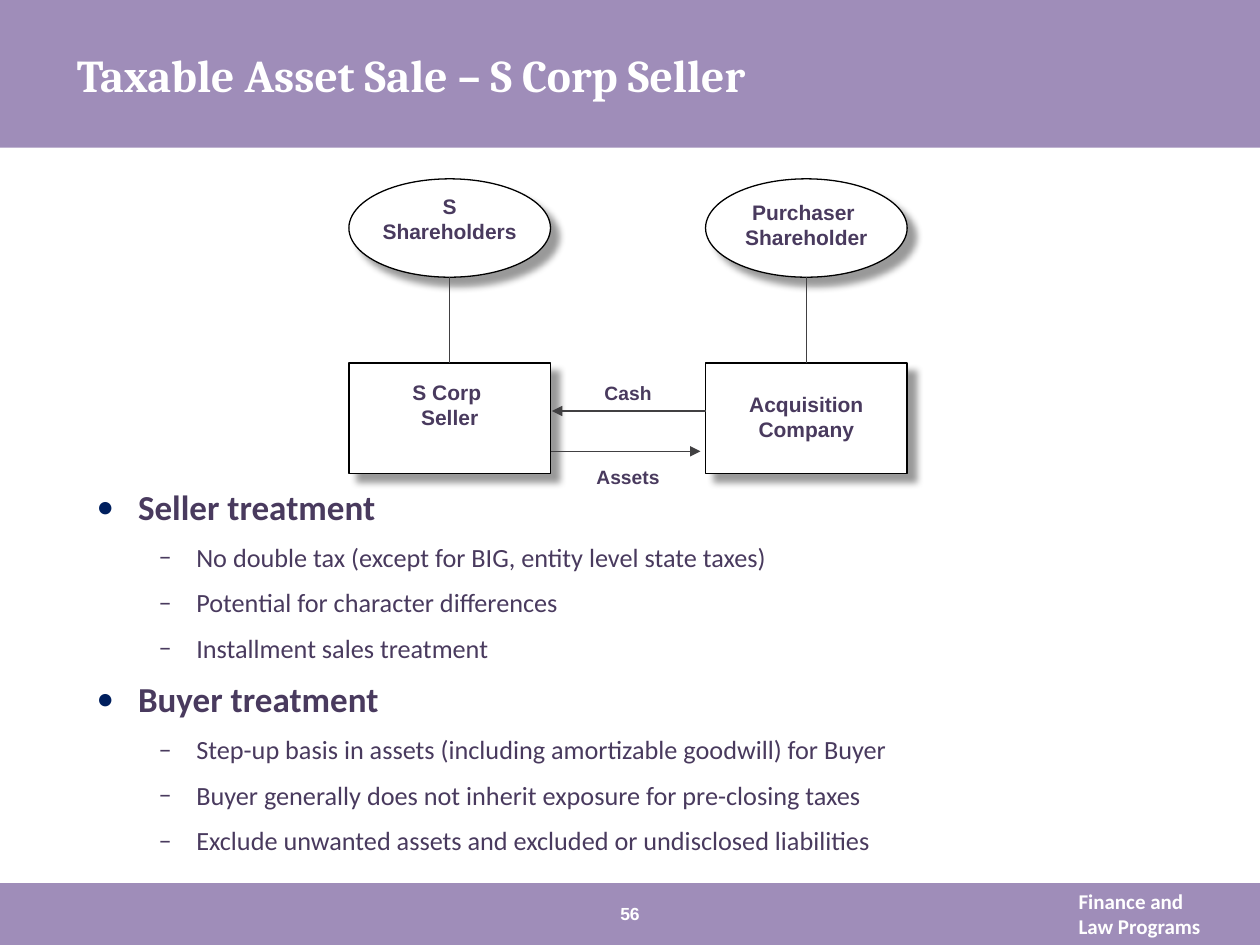
from lxml import etree
from pptx import Presentation
from pptx.dml.color import RGBColor
from pptx.enum.shapes import MSO_CONNECTOR as CONN, MSO_SHAPE as SHAPE
from pptx.enum.text import MSO_ANCHOR as ANCHOR, PP_ALIGN as ALIGN
from pptx.oxml import parse_xml
from pptx.oxml.ns import nsdecls, qn
from pptx.util import Pt

COLORS = {"band": "9F8DB9", "text": "493A5E", "bullet": "001F5E",
          "line": "414042", "black": "000000", "white": "FFFFFF"}
RGB = {name: RGBColor.from_string(value) for name, value in COLORS.items()}


def write(sp, lines, size=12, font="Arial", color="text", bold=True,
          align=ALIGN.CENTER, anchor=ANCHOR.TOP, insets=(7.2, 3.6, 7.2, 3.6)):
    """Fill a shape with one paragraph per line and return the paragraphs."""
    tf = sp.text_frame
    tf.word_wrap = True
    tf.vertical_anchor = anchor
    tf.margin_left, tf.margin_top, tf.margin_right, tf.margin_bottom = map(Pt, insets)
    for i, line in enumerate(lines):
        p = tf.paragraphs[0] if i == 0 else tf.add_paragraph()
        p.text = line
        p.alignment = align
        for r in p.runs:
            r.font.size, r.font.name, r.font.bold = Pt(size), font, bold
            r.font.color.rgb = RGB[color]
    return tf.paragraphs


def connect(x1, y1, x2, y2, arrow=False):
    """Draw a thin straight line, with an arrowhead at its end if asked."""
    c = s.shapes.add_connector(CONN.STRAIGHT, Pt(x1), Pt(y1), Pt(x2), Pt(y2))
    c.line.color.rgb = RGB["line"]
    c.line.width = Pt(0.75)
    if arrow:
        etree.SubElement(c.line._get_or_add_ln(), qn("a:tailEnd"), type="triangle")
    etree.SubElement(c._element.spPr, qn("a:effectLst"))
    return c


prs = Presentation()
prs.slide_width, prs.slide_height = Pt(720), Pt(540)
s = prs.slides.add_slide(prs.slide_layouts[6])

# Header and footer bands
for top, height in ((0, 84.4), (504.6, 35.4)):
    sp = s.shapes.add_shape(SHAPE.RECTANGLE, 0, Pt(top), Pt(720), Pt(height))
    sp.shadow.inherit = False
    sp.fill.solid()
    sp.fill.fore_color.rgb = RGB["band"]
    sp.line.fill.background()

# Title, footer and page number
title = s.shapes.add_textbox(Pt(44), 0, Pt(646), Pt(84.4))
write(title, ["Taxable Asset Sale – S Corp Seller"], size=26, font="Cambria",
      color="white", align=ALIGN.LEFT, anchor=ANCHOR.MIDDLE, insets=(0, 0, 0, 0))
footer = s.shapes.add_textbox(Pt(609.3), Pt(504), Pt(105), Pt(36))
write(footer, ["Finance and \vLaw Programs"], font="Calibri", color="white",
      align=ALIGN.LEFT)
number = s.shapes.add_textbox(Pt(324), Pt(516), Pt(72), Pt(12.5))
write(number, ["56"], size=10, color="white", anchor=ANCHOR.MIDDLE)

# Treatment list: level, text
items = [
    (0, "Seller treatment"),
    (1, "No double tax (except for BIG, entity level state taxes)"),
    (1, "Potential for character differences"),
    (1, "Installment sales treatment"),
    (0, "Buyer treatment"),
    (1, "Step-up basis in assets (including amortizable goodwill) for Buyer"),
    (1, "Buyer generally does not inherit exposure for pre-closing taxes"),
    (1, "Exclude unwanted assets and excluded or undisclosed liabilities"),
]
# Per level: size, bold, left margin, hanging indent, bullet, bullet colour
levels = [(20, True, 24.3, 23.6, "•", "bullet"), (15, False, 57.6, 21.6, "–", "text")]
body = s.shapes.add_textbox(Pt(54.6), Pt(277.2), Pt(638), Pt(198))
paragraphs = write(body, [text for _, text in items], font="Calibri",
                   align=ALIGN.LEFT, insets=(0, 0, 0, 0))
for p, (level, _) in zip(paragraphs, items):
    size, bold, margin, hang, bullet, color = levels[level]
    p.level = level
    p.space_after = Pt(8)
    p.runs[0].font.size, p.runs[0].font.bold = Pt(size), bold
    pPr = p._p.get_or_add_pPr()
    pPr.set("marL", str(Pt(margin)))
    pPr.set("indent", str(-Pt(hang)))
    bu_color = etree.SubElement(pPr, qn("a:buClr"))
    etree.SubElement(bu_color, qn("a:srgbClr"), val=COLORS[color])
    etree.SubElement(pPr, qn("a:buFont"), typeface="Calibri")
    etree.SubElement(pPr, qn("a:buChar"), char=bullet)

# Owners above their companies
seller_x, buyer_x, node_w = 199.4, 403.2, 115.2
owner_y, owner_h, company_y, company_h = 102.2, 56.2, 207.4, 63.2
OWNER = (SHAPE.OVAL, owner_y, owner_h)
COMPANY = (SHAPE.RECTANGLE, company_y, company_h)
nodes = [
    (OWNER, seller_x, ["S", "Shareholders"], ANCHOR.TOP, (2, 0, 2, 3.6)),
    (OWNER, buyer_x, ["Purchaser ", "Shareholder"], ANCHOR.MIDDLE, (2, 0, 2, 3.6)),
    (COMPANY, seller_x, ["S Corp ", "Seller"], ANCHOR.MIDDLE, (2, 2, 2, 17.4)),
    (COMPANY, buyer_x, ["Acquisition\vCompany"], ANCHOR.MIDDLE, (2, 2, 2, 3.6)),
]
companies = []
for (kind, top, height), left, lines, anchor, insets in nodes:
    sp = s.shapes.add_shape(kind, Pt(left), Pt(top), Pt(node_w), Pt(height))
    sp.fill.solid()
    sp.fill.fore_color.rgb = RGB["white"]
    sp.line.color.rgb = RGB["black"]
    sp.line.width = Pt(0.75)
    sp._element.spPr.append(parse_xml(
        f'<a:effectLst {nsdecls("a")}><a:outerShdw blurRad="{Pt(4)}" dist="{Pt(7)}" '
        f'dir="2700000" algn="tl" rotWithShape="0"><a:srgbClr val="{COLORS["black"]}">'
        '<a:alpha val="40000"/></a:srgbClr></a:outerShdw></a:effectLst>'))
    write(sp, lines, anchor=anchor, insets=insets)
    if kind == SHAPE.RECTANGLE:
        companies.append(sp)

# Ownership lines
for left, company in zip((seller_x, buyer_x), companies):
    x = left + node_w / 2
    connect(x, owner_y + owner_h, x, company_y).end_connect(company, 0)

# Cash and asset flows
connect(buyer_x, 234.9, 315.4, 234.9, arrow=True)
connect(seller_x + node_w, 257.9, 400.3, 257.9, arrow=True)
for label, top in (("Cash", 214.6), ("Assets", 262.1)):
    sp = s.shapes.add_textbox(Pt(seller_x + node_w), Pt(top),
                              Pt(buyer_x - seller_x - node_w), Pt(20))
    write(sp, [label], size=11)

prs.save("out.pptx")
